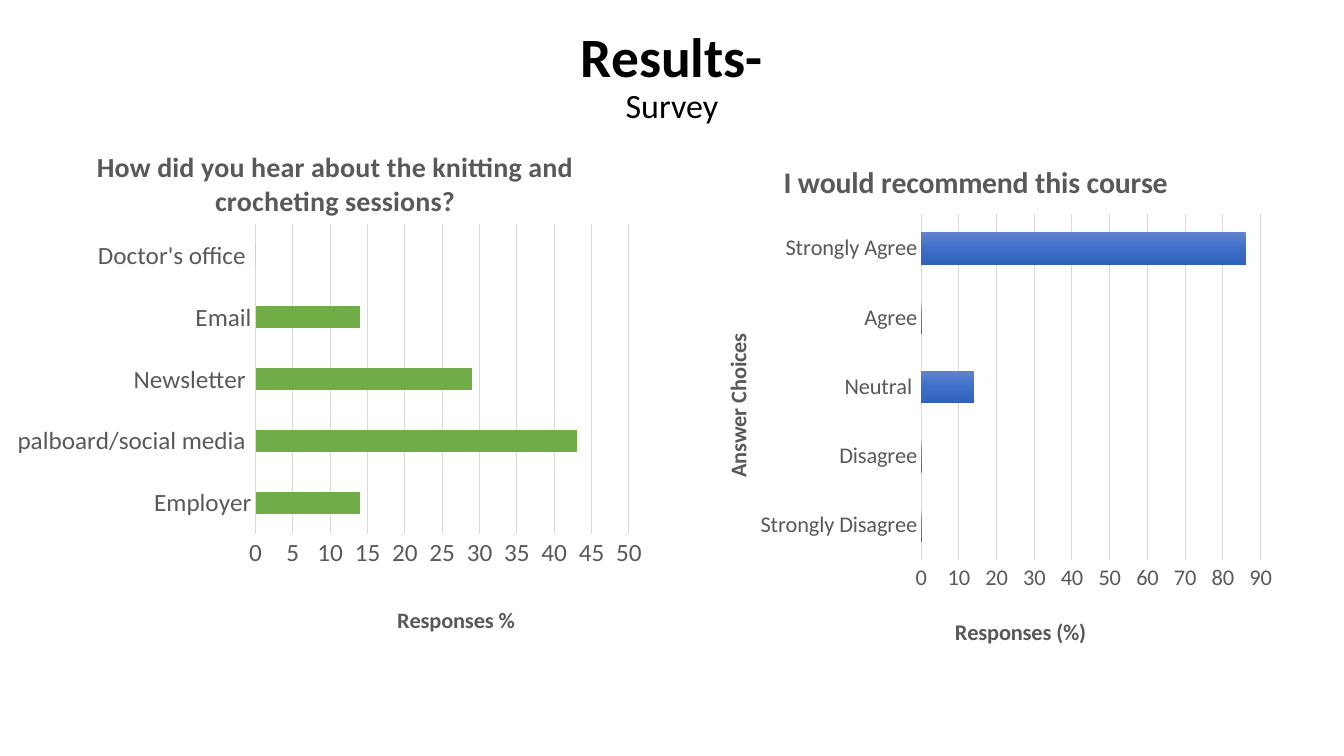
from copy import deepcopy
from pptx import Presentation
from pptx import util as u
from pptx.chart import data
from pptx.dml import color
from pptx.enum import chart as ch, text
from pptx.oxml import parse_xml
from pptx.oxml import ns

Pt = u.Pt
rgb = color.RGBColor.from_string
theme = {
    "font": "Calibri", "ink": "000000", "gray": "595959", "grid": "D9D9D9",
    "green": ["70AD47"], "blue": ["6183CB", "3E70CA", "3062BB"],
    "head": 39.6, "sub": 24.3, "axis": 16,
}


def style(font, size, tint, bold=False):
    font.name, font.size, font.bold = theme["font"], Pt(size), bold
    font.color.rgb = rgb(tint)


def place(node, **box):
    for old in node.findall(ns.qn("c:layout")):
        node.remove(old)
    inner = '<c:layoutTarget val="inner"/>' if "w" in box else ""
    modes = "".join(f'<c:{k}Mode val="edge"/>' for k in box if k in "xy")
    sizes = "".join(f'<c:{k} val="{v}"/>' for k, v in box.items())
    part = parse_xml(f'<c:layout {ns.nsdecls("c")}><c:manualLayout>{inner}'
                     f'{modes}{sizes}</c:manualLayout></c:layout>')
    node.insert(1 if node.find(ns.qn("c:tx")) is not None else 0, part)


deck = Presentation()
deck.slide_width, deck.slide_height = Pt(960), Pt(540)
slide = deck.slides.add_slide(deck.slide_layouts[6])

frame = slide.shapes.add_textbox(Pt(66), Pt(21), Pt(828), Pt(108)).text_frame
frame.word_wrap = True
frame.margin_top = frame.margin_bottom = 0
frame.text = "Results-\nSurvey"
for para, size, bold in zip(frame.paragraphs, (theme["head"], theme["sub"]), (True, False)):
    para.alignment = text.PP_ALIGN.CENTER
    para.line_spacing = 0.9
    style(para.runs[0].font, size, theme["ink"], bold)

charts = [
    dict(box=(492, 96.5, 425.5, 375), title="I would recommend this course",
         size=21.3, spot=(0.15, 0.04), tick=16, gap=115, lap=-20, top=90, step=10,
         plot=dict(x=0.39, y=0.15, w=0.57, h=0.66), fill=theme["blue"],
         cats=["Strongly Disagree", "Disagree", "Neutral ", "Agree", "Strongly Agree"],
         vals=[0, 0, 14, 0, 86], foot="Responses (%)", low=(0.44, 0.91),
         side="Answer Choices"),
    dict(box=(0, 83, 468, 375),
         title="How did you hear about the knitting and crocheting sessions?",
         size=20, spot=(0.14, 0.05), tick=18, gap=182, lap=0, top=50, step=5,
         plot=dict(x=0.39, y=0.21, w=0.57, h=0.6), fill=theme["green"],
         cats=["Employer", "palboard/social media ", "Newsletter ", "Email",
               "Doctor's office "],
         vals=[14, 43, 29, 14, 0], foot="Responses %", low=(0.6, 0.94), side=None),
]

for item in charts:
    source = data.CategoryChartData()
    source.categories = item["cats"]
    source.add_series(item["title"], item["vals"])
    chart = slide.shapes.add_chart(ch.XL_CHART_TYPE.BAR_CLUSTERED,
                                   *map(Pt, item["box"]), source).chart
    style(chart.font, 10, theme["ink"])
    chart.has_legend = False
    chart.has_title = True
    cat, val = chart.category_axis, chart.value_axis

    heads = [(chart.chart_title, item["title"], item["size"], item["spot"], 0)]
    heads.append((val.axis_title, item["foot"], theme["axis"], item["low"], 0))
    if item["side"]:
        heads.append((cat.axis_title, item["side"], theme["axis"], (0.05, 0.37), -5400000))
    for head, words, size, (x, y), turn in heads:
        head.text_frame.text = words
        style(head.text_frame.paragraphs[0].runs[0].font, size, theme["gray"], True)
        body = head._element.find(".//" + ns.qn("a:bodyPr"))
        body.set("rot", str(turn))
        body.set("vert", "horz")
        place(head._element, x=x, y=y)

    for axis in (cat, val):
        style(axis.tick_labels.font, item["tick"], theme["gray"])
        axis.major_tick_mark = axis.minor_tick_mark = ch.XL_TICK_MARK.NONE
    cat.format.line.color.rgb = rgb(theme["grid"])
    cat.format.line.width = Pt(0.75)
    val.format.line.fill.background()
    val.minimum_scale, val.maximum_scale, val.major_unit = 0, item["top"], item["step"]
    val.has_major_gridlines = True
    val.major_gridlines.format.line.color.rgb = rgb(theme["grid"])
    val.major_gridlines.format.line.width = Pt(0.75)

    plot = chart.plots[0]
    plot.vary_by_categories = False
    plot.gap_width, plot.overlap = item["gap"], item["lap"]
    fill = plot.series[0].format.fill
    tints = item["fill"]
    if len(tints) == 1:
        fill.solid()
        fill.fore_color.rgb = rgb(tints[0])
    else:
        fill.gradient()
        fill.gradient_angle = 270
        stops = chart._chartSpace.xpath(".//c:ser//a:gsLst")[0]
        stops.insert(1, deepcopy(stops[0]))
        for i, (stop, tint) in enumerate(zip(fill.gradient_stops, tints)):
            stop.position = i / 2
            stop.color.rgb = rgb(tint)
    place(chart._chartSpace.chart.plotArea, **item["plot"])

deck.save("out.pptx")
